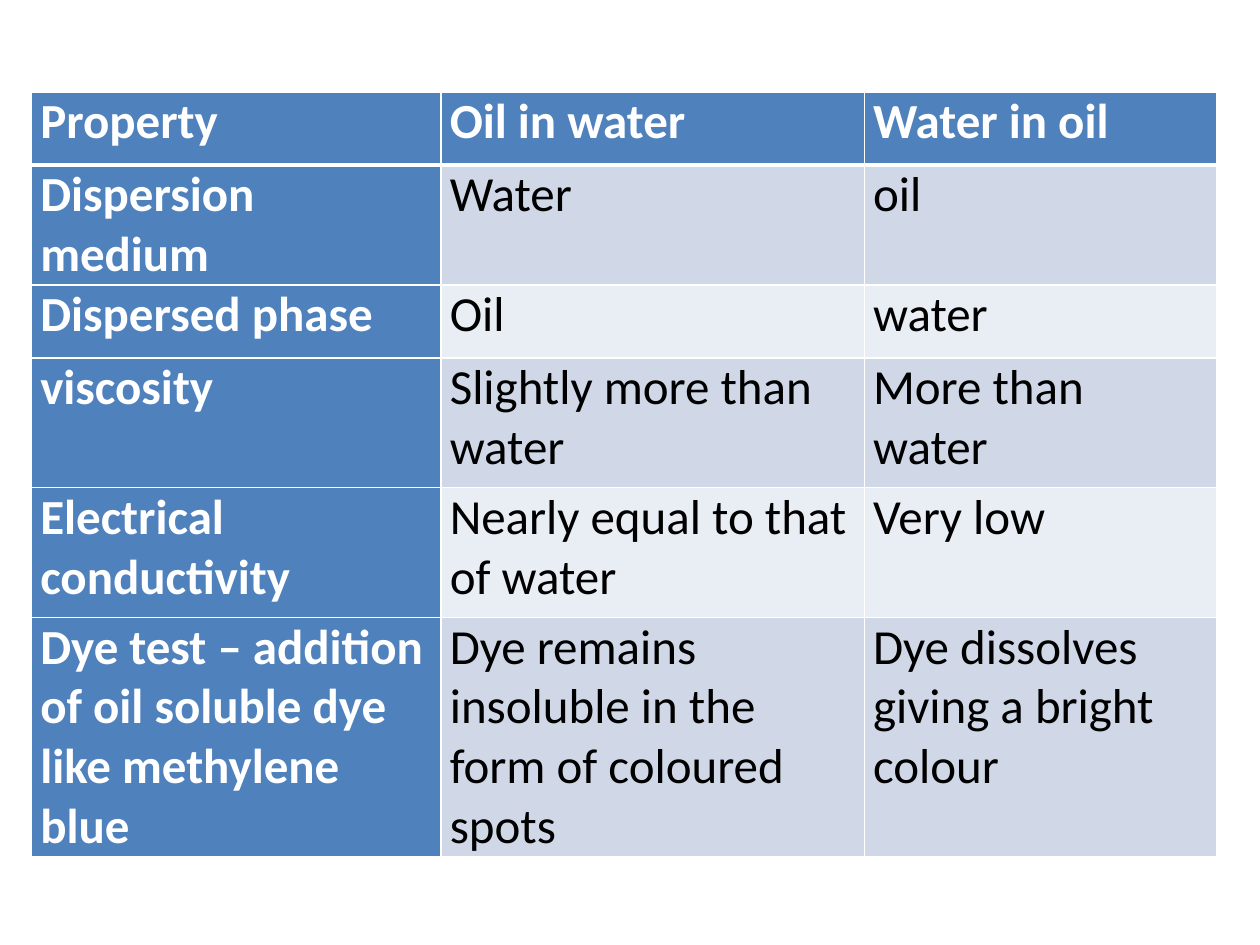
"""Build a slide with a table comparing the properties of two emulsion types."""
from dataclasses import dataclass

from lxml import etree
from pptx import Presentation
from pptx import util as u
from pptx.dml.color import RGBColor
from pptx.oxml import ns


@dataclass(frozen=True)
class Theme:
    font: str = "Calibri"
    size: int = 28
    accent: str = "4F81BD"
    bands: tuple[str, str] = ("D0D8E8", "E9EDF4")
    light: str = "FFFFFF"
    dark: str = "000000"
    thin: float = 1
    thick: float = 3


@dataclass(frozen=True)
class Row:
    height: float
    values: tuple[str, str, str]


THEME = Theme()
COLUMN_WIDTHS = (3.25, 3.36, 2.8)
ROWS = (
    Row(0.58, ("Property", "Oil in water", "Water in oil")),
    Row(0.58, ("Dispersion medium", "Water", "oil")),
    Row(0.58, ("Dispersed phase", "Oil", "water")),
    Row(1.03, ("viscosity", "Slightly more than water", "More than water")),
    Row(1.03, ("Electrical conductivity", "Nearly equal to that of water", "Very low")),
    Row(1.87, (
        "Dye test – addition of oil soluble dye like methylene blue",
        "Dye remains insoluble in the form of coloured spots",
        "Dye dissolves giving a bright colour",
    )),
)


def set_borders(cell, *, color: str, **widths: float) -> None:
    """Draw solid cell borders, with widths in points keyed by side L, R, T, B."""
    properties = cell._tc.get_or_add_tcPr()
    for index, (side, width) in enumerate(widths.items()):
        line = etree.Element(ns.qn(f"a:ln{side}"), w=str(u.Pt(width)))
        fill = etree.SubElement(line, ns.qn("a:solidFill"))
        etree.SubElement(fill, ns.qn("a:srgbClr"), val=color)
        properties.insert(index, line)


def write_cell(cell, content: str, *, fill: str, color: str, bold: bool) -> None:
    """Fill a cell and write its text."""
    cell.margin_left = cell.margin_right = u.Inches(0.07)
    cell.margin_top = cell.margin_bottom = 0
    cell.fill.solid()
    cell.fill.fore_color.rgb = RGBColor.from_string(fill)
    span = cell.text_frame.paragraphs[0].add_run()
    span.text = content
    span.font.name = THEME.font
    span.font.size = u.Pt(THEME.size)
    span.font.bold = bold
    span.font.color.rgb = RGBColor.from_string(color)


def draw_table(page, rows: tuple[Row, ...], left: float, top: float) -> None:
    """Draw the comparison table with a header row and a header column."""
    table = page.shapes.add_table(
        len(rows), len(COLUMN_WIDTHS), u.Inches(left), u.Inches(top),
        u.Inches(sum(COLUMN_WIDTHS)), u.Inches(sum(row.height for row in rows)),
    ).table
    for column, width in zip(table.columns, COLUMN_WIDTHS):
        column.width = u.Inches(width)
    for r, row in enumerate(rows):
        table.rows[r].height = u.Inches(row.height)
        for c, content in enumerate(row.values):
            cell = table.cell(r, c)
            heading = r == 0 or c == 0
            write_cell(
                cell, content, bold=heading,
                fill=THEME.accent if heading else THEME.bands[(r - 1) % 2],
                color=THEME.light if heading else THEME.dark,
            )
            set_borders(
                cell, color=THEME.light, L=THEME.thin, R=THEME.thin,
                T=THEME.thick if r == 1 else THEME.thin,
                B=THEME.thick if r == 0 else THEME.thin,
            )


def main() -> None:
    """Create the deck and save it."""
    deck = Presentation()
    deck.slide_width, deck.slide_height = u.Inches(10), u.Inches(7.5)
    page = deck.slides.add_slide(deck.slide_layouts.get_by_name("Blank"))
    draw_table(page, ROWS, left=0.25, top=0.73)
    deck.save("out.pptx")


if __name__ == "__main__":
    main()
